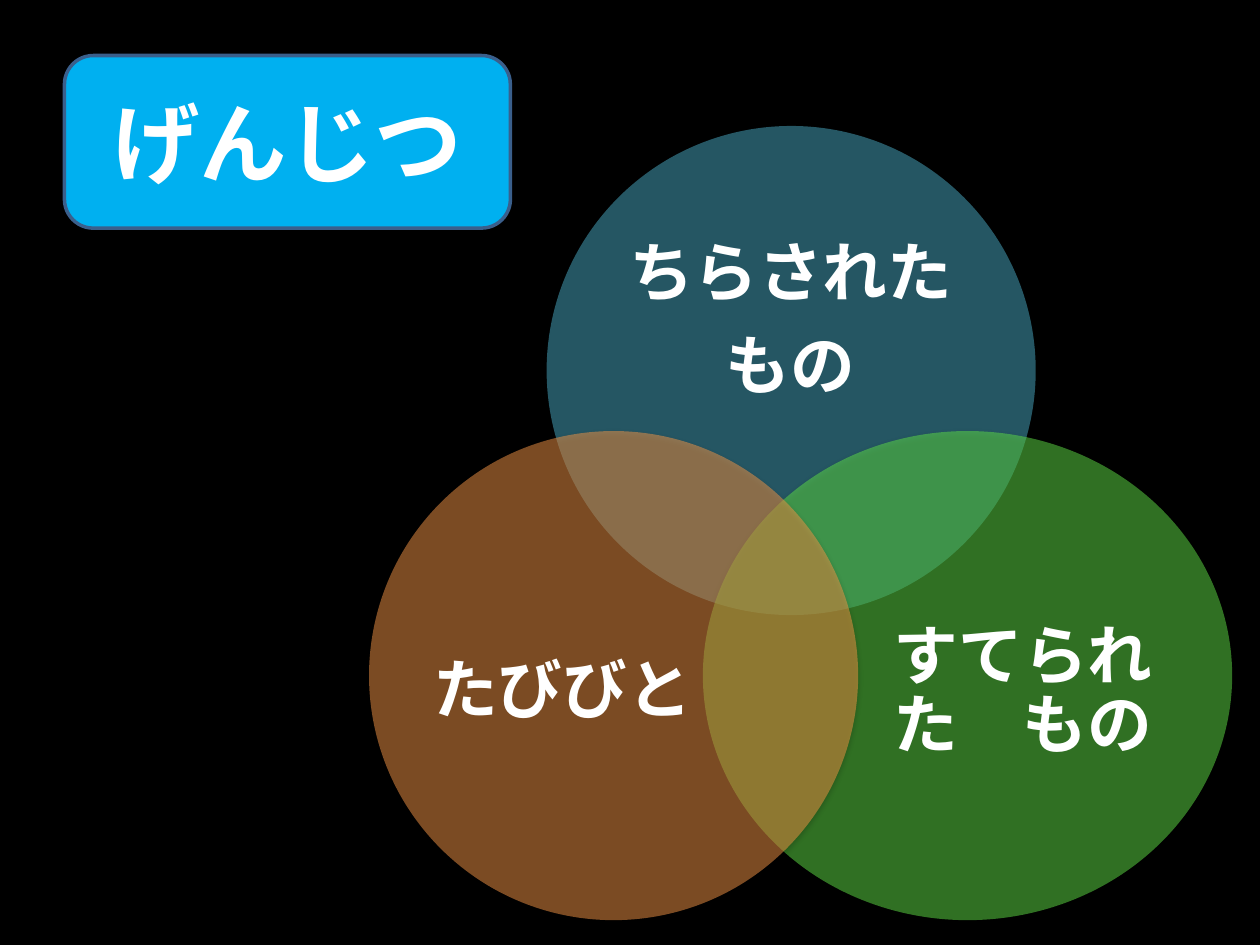
"""Build a slide with a title panel and three overlapping labelled circles."""
from lxml import etree
from pptx import Presentation
from pptx import util as u
from pptx.dml.color import RGBColor
from pptx.enum import shapes, text
from pptx.oxml import ns

BLACK = RGBColor(0x00, 0x00, 0x00)
WHITE = RGBColor(0xFF, 0xFF, 0xFF)
SKY = RGBColor(0x00, 0xB0, 0xF0)
NAVY = RGBColor(0x3A, 0x5F, 0x8C)
TEAL = RGBColor(0x4B, 0xAC, 0xC6)
GREEN = RGBColor(0x60, 0xE1, 0x46)
ORANGE = RGBColor(0xF7, 0x96, 0x46)

FONT = "Arial"
TITLE = "げんじつ"
TITLE_AREA = (1.3, 1.12, 8.99, 3.48)
DIAMETER = 9.86
LOWER_TOP = 8.69
CIRCLES = [
    {"color": TEAL, "area": (11.02, 2.54, DIAMETER, DIAMETER),
     "label": "ちらされた\nもの", "label_area": (12.32, 4.27, 7.24, 4.45)},
    {"color": GREEN, "area": (14.17, LOWER_TOP, 10.67, DIAMETER),
     "label": "すてられた　もの", "label_area": (17.42, 11.25, 6.4, 5.44)},
    {"color": ORANGE, "area": (7.44, LOWER_TOP, DIAMETER, DIAMETER),
     "label": "たびびと", "label_area": (8.38, 11.25, 5.92, 5.44)},
]


def lengths(area):
    return [u.Cm(value) for value in area]


def write(box, words, size):
    frame = box.text_frame
    frame.text = words
    frame.word_wrap = True
    frame.auto_size = text.MSO_AUTO_SIZE.NONE
    frame.vertical_anchor = text.MSO_ANCHOR.MIDDLE
    for para in frame.paragraphs:
        para.alignment = text.PP_ALIGN.CENTER
        for span in para.runs:
            span.font.name = FONT
            span.font.size = u.Pt(size)
            span.font.bold = True
            span.font.color.rgb = WHITE


def add_title(page):
    panel = page.shapes.add_shape(
        shapes.MSO_SHAPE.ROUNDED_RECTANGLE, *lengths(TITLE_AREA))
    panel.shadow.inherit = False
    panel.fill.solid()
    panel.fill.fore_color.rgb = SKY
    panel.line.color.rgb = NAVY
    panel.line.width = u.Pt(2)
    title = page.shapes.title
    title.left, title.top, title.width, title.height = lengths(TITLE_AREA)
    write(title, TITLE, 50)
    panel._element.addnext(title._element)


def add_child(parent, tag, **attributes):
    return etree.SubElement(parent, ns.qn(tag), attributes)


def add_circle(page, color, area):
    circle = page.shapes.add_shape(shapes.MSO_SHAPE.OVAL, *lengths(area))
    circle.fill.solid()
    circle.fill.fore_color.rgb = color
    circle.line.fill.background()
    circle.shadow.inherit = False
    properties = circle._element.spPr
    fill_color = properties.find(ns.qn("a:solidFill"))[0]
    add_child(fill_color, "a:alpha", val="50000")
    shadow = add_child(
        properties.find(ns.qn("a:effectLst")), "a:outerShdw",
        blurRad=str(u.Pt(3.1)), dist=str(u.Pt(1.6)), dir="5400000", rotWithShape="0")
    shadow_color = add_child(shadow, "a:srgbClr", val=str(BLACK))
    add_child(shadow_color, "a:alpha", val="38000")


def add_label(page, words, area):
    label = page.shapes.add_textbox(*lengths(area))
    write(label, words, 37)
    frame = label.text_frame
    frame.margin_left = frame.margin_right = 0
    frame.margin_top = frame.margin_bottom = 0
    for para in frame.paragraphs:
        para.line_spacing = 0.9
        para.space_after = u.Pt(13)


def main():
    deck = Presentation()
    deck.slide_width, deck.slide_height = u.Cm(25.4), u.Cm(19.05)
    page = deck.slides.add_slide(deck.slide_layouts.get_by_name("Title Only"))
    page.background.fill.solid()
    page.background.fill.fore_color.rgb = BLACK
    add_title(page)
    for circle in CIRCLES:
        add_circle(page, circle["color"], circle["area"])
        add_label(page, circle["label"], circle["label_area"])
    deck.save("out.pptx")


if __name__ == "__main__":
    main()
